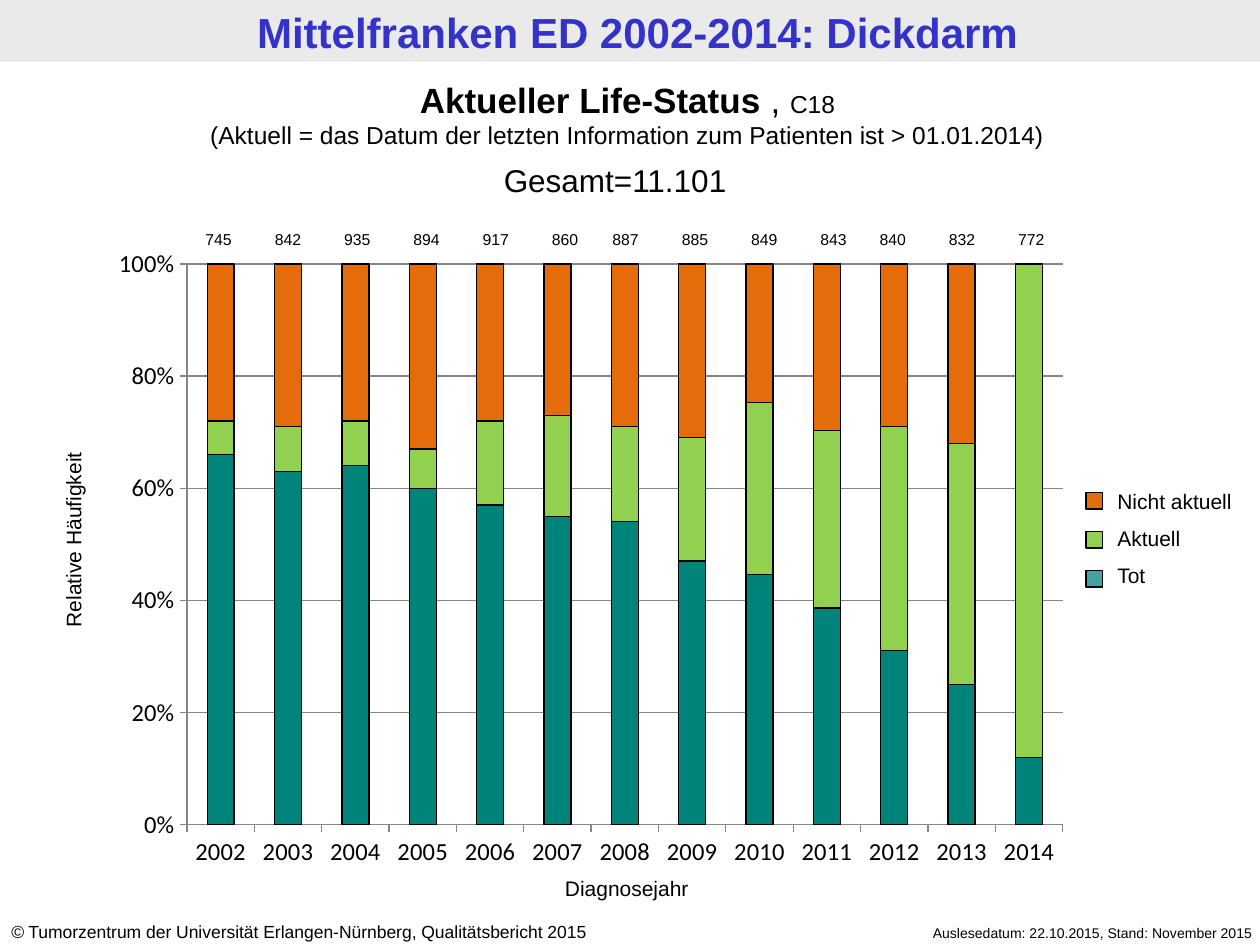
import pptx
import pptx.chart.data
import pptx.dml.color
import pptx.enum.chart
import pptx.enum.shapes
import pptx.enum.text
import pptx.oxml
import pptx.oxml.ns
import pptx.util
from pptx.util import Inches

RGBColor = pptx.dml.color.RGBColor
Pt = pptx.util.Pt
ALIGN = pptx.enum.text.PP_ALIGN

BLACK = RGBColor(0x00, 0x00, 0x00)
BANNER = RGBColor(0xEA, 0xEA, 0xEA)
TITLE_BLUE = RGBColor(0x33, 0x33, 0xCC)
GRID = RGBColor(0x86, 0x86, 0x86)
TEAL = RGBColor(0x00, 0x83, 0x78)
LEGEND_TEAL = RGBColor(0x00, 0x83, 0x80)
GREEN = RGBColor(0x92, 0xD0, 0x50)
ORANGE = RGBColor(0xE4, 0x6C, 0x0A)

YEARS = [str(year) for year in range(2002, 2015)]
SERIES = [
    ("Series 1", TEAL, [66, 63, 64, 60, 57, 55, 54, 47, 45, 39, 31, 25, 12]),
    ("Series 2", GREEN, [6, 8, 8, 7, 15, 18, 17, 22, 31, 32, 40, 43, 88]),
    ("Series 3", ORANGE, [28, 29, 28, 33, 28, 27, 29, 31, 25, 30, 29, 32, 0]),
]
# Case counts above the columns: left edge of each evenly spaced group
COUNT_GROUPS = [
    (1.46, ["745", "842", "935", "894", "917", "860"]),
    (4.69, ["887", "885", "849", "843"]),
    (6.81, ["840", "832", "772"]),
]
COUNT_WIDTH = 0.55
LEGEND = [("Nicht aktuell", ORANGE, None), ("Aktuell", GREEN, None),
          ("Tot", LEGEND_TEAL, 74)]


def add_run(p, text, size=12, bold=False, italic=False, color=BLACK):
    r = p.add_run()
    r.text = text
    r.font.name = "Arial"
    r.font.size = Pt(size)
    r.font.bold = bold
    r.font.italic = italic
    r.font.color.rgb = color


def fill_text(sp, paragraphs, align=ALIGN.LEFT, gap=0, anchor="TOP", **font):
    """Write paragraphs, each a string or a list of (text, format) runs."""
    tf = sp.text_frame
    tf.word_wrap = True
    tf.vertical_anchor = getattr(pptx.enum.text.MSO_ANCHOR, anchor)
    for i, runs in enumerate(paragraphs):
        p = tf.paragraphs[0] if i == 0 else tf.add_paragraph()
        p.alignment = align
        if i:
            p.space_before = Pt(gap)
        if isinstance(runs, str):
            runs = [(runs, {})]
        for text, extra in runs:
            add_run(p, text, **{**font, **extra})


def add_text(s, box, *paragraphs, rotation=0, **options):
    sp = s.shapes.add_textbox(*map(Inches, box))
    sp.rotation = rotation
    fill_text(sp, paragraphs, **options)


def add_rect(s, box, color, outlined=True, opacity=None):
    sp = s.shapes.add_shape(pptx.enum.shapes.MSO_SHAPE.RECTANGLE, *map(Inches, box))
    sp.shadow.inherit = False
    sp.fill.solid()
    sp.fill.fore_color.rgb = color
    if opacity:
        clr = sp.fill._xPr.find(".//" + pptx.oxml.ns.qn("a:srgbClr"))
        alpha = clr.makeelement(pptx.oxml.ns.qn("a:alpha"), {"val": str(opacity * 1000)})
        clr.append(alpha)
    if outlined:
        sp.line.color.rgb = BLACK
        sp.line.width = Pt(0.75)
    else:
        sp.line.fill.background()


def set_plot_layout(chart, **fractions):
    """Fix the inner plot area, given as fractions of the chart."""
    plot_area = chart._chartSpace.chart.plotArea
    old = plot_area.find(pptx.oxml.ns.qn("c:layout"))
    if old is not None:
        plot_area.remove(old)
    values = "".join(f'<c:{k} val="{v}"/>' for k, v in fractions.items())
    plot_area.insert(0, pptx.oxml.parse_xml(
        f'<c:layout {pptx.oxml.ns.nsdecls("c")}><c:manualLayout>'
        '<c:layoutTarget val="inner"/><c:xMode val="edge"/><c:yMode val="edge"/>'
        f'{values}</c:manualLayout></c:layout>'))


def style_axis(axis):
    axis.major_tick_mark = pptx.enum.chart.XL_TICK_MARK.OUTSIDE
    axis.minor_tick_mark = pptx.enum.chart.XL_TICK_MARK.NONE
    axis.tick_labels.font.size = Pt(14)
    axis.format.line.color.rgb = GRID
    axis.format.line.width = Pt(0.75)


def add_status_chart(s):
    data = pptx.chart.data.CategoryChartData()
    data.categories = YEARS
    for name, _, values in SERIES:
        data.add_series(name, values)
    chart = s.shapes.add_chart(
        pptx.enum.chart.XL_CHART_TYPE.COLUMN_STACKED_100,
        Inches(0.79), Inches(1.87), Inches(7.8), Inches(5.11), data).chart
    chart.has_legend = False
    chart.has_title = False
    chart.font.name = "Calibri"
    chart.font.size = Pt(18)
    chart.font.color.rgb = BLACK

    plot = chart.plots[0]
    plot.gap_width = 150
    plot.overlap = 100
    plot.vary_by_categories = False
    for series, (_, color, _) in zip(plot.series, SERIES):
        series.format.fill.solid()
        series.format.fill.fore_color.rgb = color
        series.format.line.color.rgb = BLACK
        series.format.line.width = Pt(0.75)

    style_axis(chart.category_axis)
    axis = chart.value_axis
    style_axis(axis)
    axis.minimum_scale = 0
    axis.maximum_scale = 1
    axis.major_unit = 0.2
    axis.tick_labels.number_format = "0%"
    axis.tick_labels.number_format_is_linked = False
    axis.has_major_gridlines = True
    axis.major_gridlines.format.line.color.rgb = GRID
    axis.major_gridlines.format.line.width = Pt(0.75)
    set_plot_layout(chart, x=0.089, y=0.044, w=0.891, h=0.871)


def add_title(s, text):
    title = s.shapes.title
    title.left, title.top, title.width, title.height = map(Inches, (0.06, 0.01, 10, 0.49))
    tf = title.text_frame
    tf.margin_top = tf.margin_bottom = Inches(0.04)
    fill_text(title, [text], align=ALIGN.CENTER, anchor="MIDDLE",
              size=24, bold=True, color=TITLE_BLUE)


def add_counts(s):
    for left, counts in COUNT_GROUPS:
        for i, count in enumerate(counts):
            add_text(s, (left + i * COUNT_WIDTH, 1.77, COUNT_WIDTH, 0.25), count,
                     align=ALIGN.CENTER, size=9)


def add_legend(s):
    add_text(s, (8.77, 3.83, 1.23, 0.91), *[label for label, _, _ in LEGEND], gap=6.6)
    for i, (_, color, opacity) in enumerate(LEGEND):
        add_rect(s, (8.62, 3.91 + i * 0.31, 0.13, 0.13), color, opacity=opacity)


def main():
    prs = pptx.Presentation()
    prs.slide_width, prs.slide_height = Inches(10), Inches(7.5)
    s = prs.slides.add_slide(prs.slide_layouts[5])

    add_rect(s, (0, 0, 10, 0.49), BANNER, outlined=False)
    # Bring the title in front of the banner
    s.shapes._spTree.append(s.shapes.title._element)
    add_title(s, "Mittelfranken ED 2002-2014: Dickdarm")
    add_text(s, (6.65, 7.29, 3.39, 0.24), "Auslesedatum: 22.10.2015, Stand: November 2015",
             align=ALIGN.RIGHT, size=8)
    add_text(s, (-0.01, 7.26, 5.24, 0.27), [
        ("©", {"italic": True}),
        (" Tumorzentrum der Universität Erlangen-Nürnberg, Qualitätsbericht 2015", {})],
        size=10)

    add_status_chart(s)
    add_text(s, (-0.62, 4.13, 2.41, 0.31), "Relative Häufigkeit",
             rotation=270, align=ALIGN.CENTER)
    add_text(s, (3.85, 6.9, 2.25, 0.31), "Diagnosejahr", align=ALIGN.CENTER)
    add_counts(s)
    add_text(s, (-0.04, 0.57, 10.04, 0.67),
             [("Aktueller Life-Status ", {"size": 20, "bold": True}),
              (", ", {"size": 20}), ("C18", {})],
             "(Aktuell = das Datum der letzten Information zum Patienten ist > 01.01.2014)",
             align=ALIGN.CENTER, size=14)
    add_text(s, (3.9, 1.23, 2.2, 0.4), "Gesamt=11.101", size=18)
    add_legend(s)
    prs.save("out.pptx")


if __name__ == "__main__":
    main()
